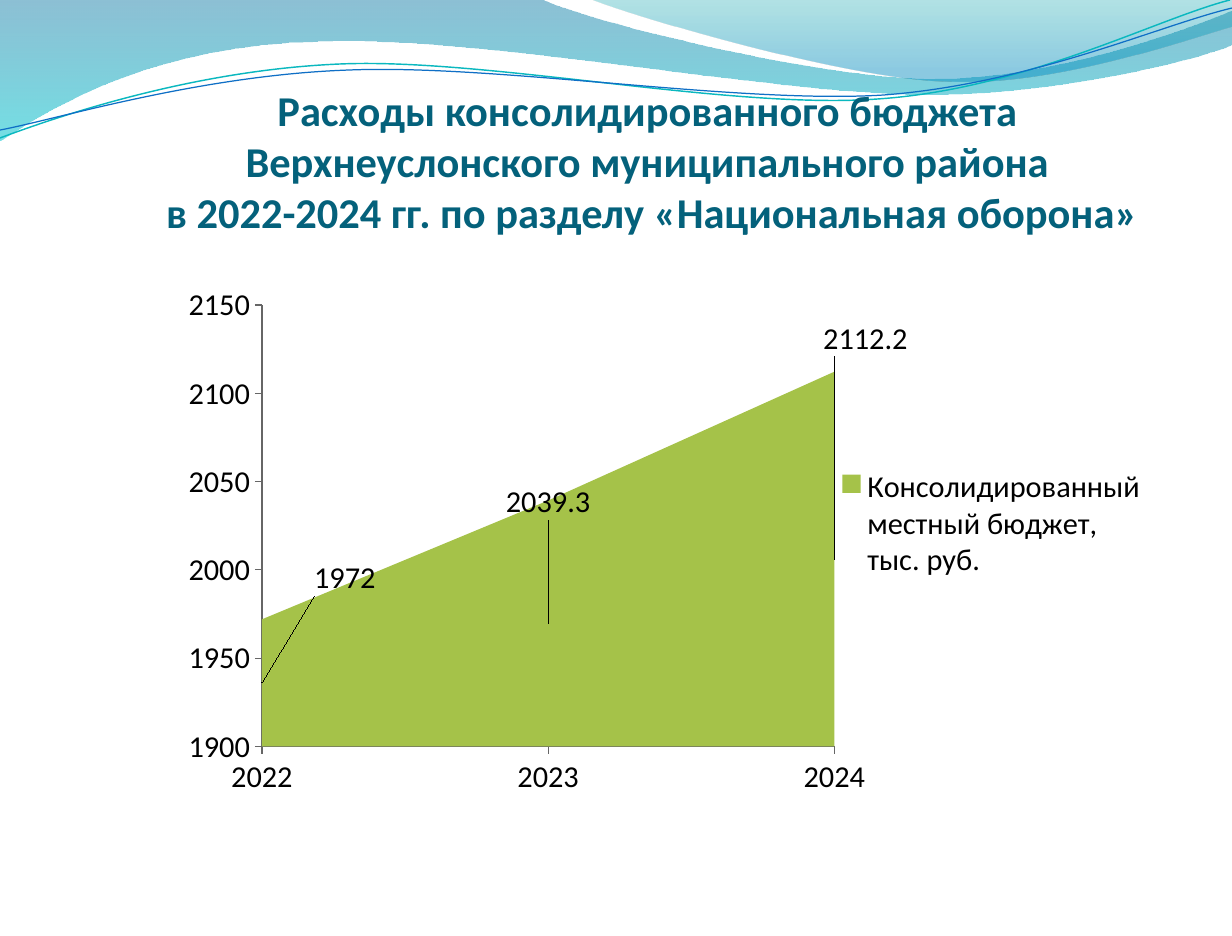
from lxml import etree
from pptx import Presentation
from pptx.chart.data import CategoryChartData
from pptx.dml.color import RGBColor
from pptx.enum.chart import XL_CHART_TYPE, XL_LEGEND_POSITION, XL_TICK_MARK
from pptx.enum.text import MSO_ANCHOR, PP_ALIGN
from pptx.oxml import parse_xml
from pptx.oxml.ns import nsdecls, qn
from pptx.util import Pt

AREA = XL_CHART_TYPE.AREA
RIGHT = XL_LEGEND_POSITION.RIGHT
OUT, NONE = XL_TICK_MARK.OUTSIDE, XL_TICK_MARK.NONE
CENTER, BOTTOM = PP_ALIGN.CENTER, MSO_ANCHOR.BOTTOM

SCALE = 7538  # EMU in one px
WIDTH, HEIGHT = 1232, 936
COLORS = {
    "title": "04617B", "text": "000000", "area": "A5C249", "axis": "666666",
    "teal": "0AB8BF", "blue": "0F6FC6",
    "deep": "0074A1", "aqua": "00C6CF", "sea": "00A1A9", "sky": "008BBF",
}
NO_LEADERS = (
    f'<c:extLst {nsdecls("c")}>'
    '<c:ext uri="{CE6537A1-D6FC-4f65-9D91-7224C49458BB}" xmlns:c15='
    '"http://schemas.microsoft.com/office/drawing/2012/chart">'
    '<c15:showLeaderLines val="0"/></c:ext></c:extLst>')


def color(name):
    return RGBColor.from_string(COLORS[name])


def apply(item, values):
    for name, value in values.items():
        setattr(item, name, value)


def place(owner, before, **values):
    """Put a manual layout into a chart part, after the given child."""
    for old in owner.findall(qn("c:layout")):
        owner.remove(old)
    marks = "".join(f'<c:{k} val="{v}"/>' for k, v in values.items())
    node = parse_xml(f'<c:layout {nsdecls("c")}><c:manualLayout>{marks}'
                     '</c:manualLayout></c:layout>')
    if before is None:
        owner.insert(0, node)
    else:
        owner.find(qn(before)).addnext(node)


class Deck:
    font = "Calibri"

    def __init__(self):
        self.file = Presentation()
        apply(self.file, {"slide_width": WIDTH * SCALE,
                          "slide_height": HEIGHT * SCALE})
        self.slide = self.file.slides.add_slide(self.file.slide_layouts[6])
        self.shapes = self.slide.shapes

    def outline(self, start, parts, close):
        """Draw lines (x, y) and cubic curves (six numbers)."""
        knots = [part[i:i + 2] for part in parts
                 for i in range(0, len(part), 2)]
        pen = self.shapes.build_freeform(*start, scale=SCALE)
        pen.add_line_segments(knots, close=close)
        shape = pen.convert_to_shape()
        shape.shadow.inherit = False
        shape.fill.background()

        # Join each three knots of a curve
        lines = iter(list(shape._element.iter(qn("a:lnTo"))))
        for part in parts:
            first = next(lines)
            if len(part) == 6:
                bend = etree.SubElement(first.getparent(), qn("a:cubicBezTo"))
                first.addprevious(bend)
                for line in (first, next(lines), next(lines)):
                    bend.append(line[0])
                    line.getparent().remove(line)
        return shape

    def wave(self, start, parts, stops):
        shape = self.outline(start, parts, True)
        shape.line.fill.background()
        marks = "".join(
            f'<a:gs pos="{pos * 1000}"><a:srgbClr val="{COLORS[name]}">'
            f'<a:alpha val="{alpha * 1000}"/></a:srgbClr></a:gs>'
            for pos, name, alpha in stops)
        props = shape._element.spPr
        props.replace(props.find(qn("a:noFill")), parse_xml(
            f'<a:gradFill {nsdecls("a")}><a:gsLst>{marks}</a:gsLst>'
            '<a:lin ang="5400000" scaled="0"/></a:gradFill>'))

    def curve(self, start, parts, name, width):
        line = self.outline(start, parts, False).line
        line.color.rgb = color(name)
        line.width = Pt(width)

    def title(self, box, text, size):
        frame = self.shapes.add_textbox(*(n * SCALE for n in box)).text_frame
        apply(frame, {"word_wrap": True, "vertical_anchor": BOTTOM,
                      "margin_left": 0, "margin_right": 0,
                      "margin_top": 0, "margin_bottom": 0})
        frame.text = text
        para = frame.paragraphs[0]
        para.alignment = CENTER
        apply(para.font, {"name": self.font, "size": Pt(size), "bold": True})
        para.font.color.rgb = color("title")

    def chart(self, box, cats, name, values, shifts, size):
        data = CategoryChartData()
        data.categories = cats
        data.add_series(name, values)
        chart = self.shapes.add_chart(
            AREA, *(n * SCALE for n in box), data).chart
        apply(chart, {"has_title": False, "has_legend": True})
        apply(chart.font, {"name": self.font, "size": Pt(size)})
        chart.font.color.rgb = color("text")

        # Axes
        for axis in (chart.category_axis, chart.value_axis):
            apply(axis, {"major_tick_mark": OUT, "minor_tick_mark": NONE,
                         "has_major_gridlines": False})
            axis.format.line.color.rgb = color("axis")
        apply(chart.value_axis, {"minimum_scale": 1900, "maximum_scale": 2150,
                                 "major_unit": 50})

        # Plot area and legend
        place(chart._chartSpace.chart.plotArea, None, layoutTarget="inner",
              xMode="edge", yMode="edge", x=0.134, y=0.049, w=0.552, h=0.8)
        apply(chart.legend, {"position": RIGHT, "include_in_layout": False})
        place(chart.legend._element, "c:legendPos", xMode="edge",
              yMode="edge", x=0.71, y=0.34, w=0.29, h=0.21)

        # Series and its labels
        series = chart.plots[0].series[0]
        series.format.fill.solid()
        series.format.fill.fore_color.rgb = color("area")
        labels = series.data_labels
        labels.show_value = True
        for index, (x, y) in enumerate(shifts):
            series.points[index].data_label.font.size = Pt(size)
            label = labels._element.findall(qn("c:dLbl"))[index]
            place(label, "c:idx", x=x, y=y)
            label.append(parse_xml(NO_LEADERS))
        labels._element.append(parse_xml(NO_LEADERS))


def main():
    deck = Deck()

    # Waves along the top
    deck.wave((0, 0), [
        (542, 0), (586, 21, 818, 79, 934, 79), (1052, 79, 1181, 32, 1232, 11),
        (1232, 45), (1212, 55, 1072, 95, 919, 95), (766, 93, 471, 35, 317, 42),
        (159, 45, 57, 103, 0, 141),
    ], [(0, "deep", 45), (100, "aqua", 55)])
    deck.wave((591, 0), [
        (628, 15, 841, 78, 947, 81), (1054, 86, 1185, 40, 1232, 27), (1232, 0),
    ], [(0, "sea", 30), (80, "sky", 45)])
    deck.curve((0, 138), [
        (59, 116, 194, 70, 341, 64), (488, 58, 730, 110, 878, 99),
        (1026, 89, 1156, 19, 1230, 0),
    ], "teal", 0.85)
    deck.curve((0, 130), [
        (58, 119, 201, 75, 349, 70), (496, 64, 736, 104, 883, 95),
        (1031, 84, 1160, 25, 1232, 8),
    ], "blue", 0.75)

    # Title
    deck.title((114, 48, 1067, 189),
               "Расходы консолидированного бюджета Верхнеуслонского "
               "муниципального района\v в 2022-2024 гг. по разделу "
               "«Национальная оборона»", 25.2)

    # Spending by year
    deck.chart((123, 278, 1037, 552), ["2022", "2023", "2024"],
               "Консолидированный местный бюджет, тыс. руб.",
               [1972, 2039.3, 2112.2],
               [(0.08, -0.19), (0, -0.22), (0.03, -0.4)], 18)

    deck.file.save("out.pptx")


if __name__ == "__main__":
    main()
